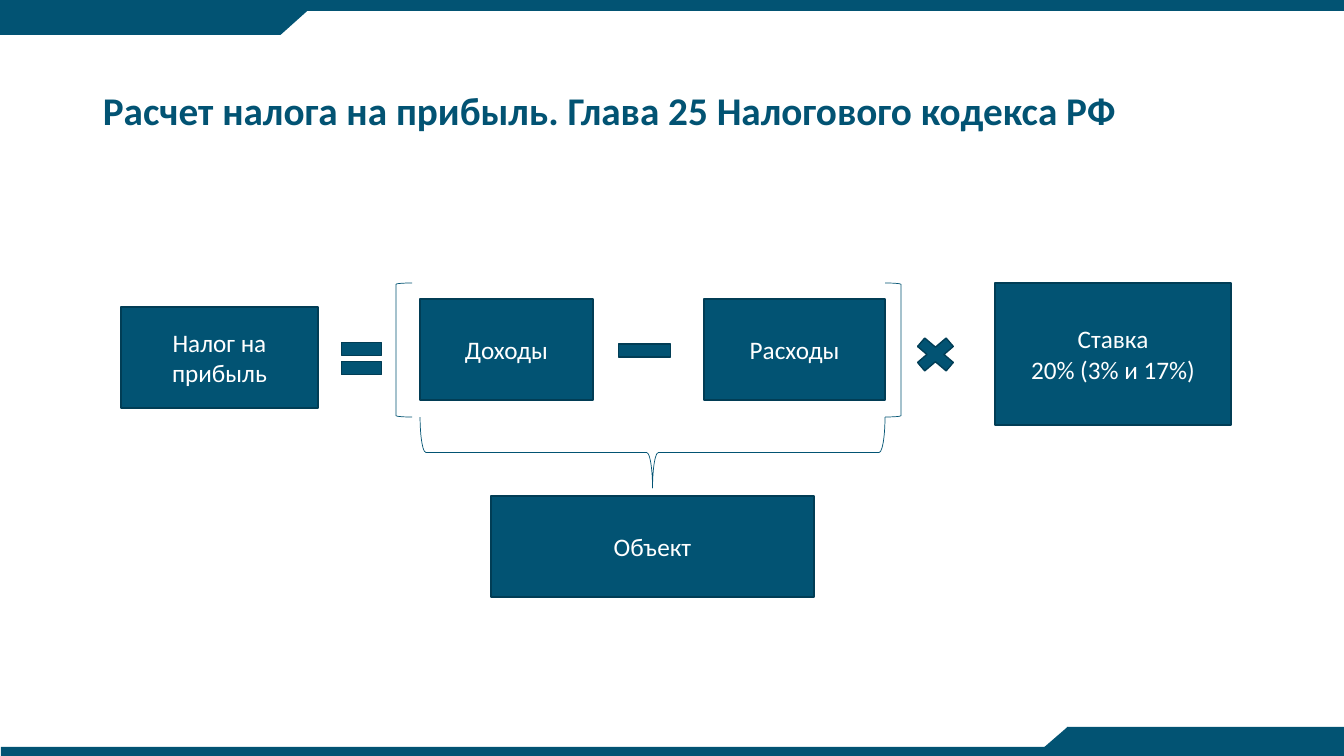
from dataclasses import dataclass

from pptx import Presentation
from pptx.dml.color import RGBColor
from pptx.enum.shapes import MSO_SHAPE as Shape
from pptx.enum.text import MSO_ANCHOR as Anchor, PP_ALIGN as Align
from pptx.util import Emu, Pt

EMU_PER_PX = 914400 / 100.8


def px(length):
    return Emu(round(length * EMU_PER_PX))


@dataclass(frozen=True)
class Theme:
    main: RGBColor = RGBColor.from_string("025373")
    edge: RGBColor = RGBColor.from_string("013D55")
    light: RGBColor = RGBColor.from_string("FFFFFF")
    font: str = "Calibri"
    title_size: int = 28
    body_size: int = 18
    edge_width: float = 1
    thin_width: float = 0.5


@dataclass(frozen=True)
class Box:
    left: int
    top: int
    width: int
    height: int

    def inner(self, left, top, width, height):
        return Box(self.left + left, self.top + top, width, height)

    def emu(self):
        return [px(side) for side in (self.left, self.top, self.width, self.height)]


THEME = Theme()
PAGE = Box(0, 0, 1344, 756)


def add_text(shape, lines, size=THEME.body_size, color=THEME.light, bold=False,
             align=Align.CENTER, spacing=1.0):
    frame = shape.text_frame
    frame.word_wrap = True
    frame.vertical_anchor = Anchor.MIDDLE
    for index, line in enumerate(lines):
        para = frame.paragraphs[0] if index == 0 else frame.add_paragraph()
        para.alignment = align
        para.line_spacing = spacing
        span = para.add_run()
        span.text = line
        span.font.name = THEME.font
        span.font.size = Pt(size)
        span.font.bold = bold
        span.font.color.rgb = color


def add_figure(slide, kind, box, filled=True, line=None, width=THEME.edge_width, rotation=0):
    shape = slide.shapes.add_shape(kind, *box.emu())
    shape.shadow.inherit = False
    shape.rotation = rotation
    if filled:
        shape.fill.solid()
        shape.fill.fore_color.rgb = THEME.main
    else:
        shape.fill.background()
    if line is None:
        shape.line.fill.background()
    else:
        shape.line.color.rgb = line
        shape.line.width = Pt(width)
    return shape


def add_top_band(slide, box):
    add_figure(slide, Shape.RECTANGLE, box.inner(0, 0, box.width, 11))
    add_figure(slide, Shape.RECTANGLE, box.inner(0, 5, 280, 30))
    add_figure(slide, Shape.FLOWCHART_MERGE, box.inner(247, 5, 67, 30))


def add_bottom_band(slide, box):
    add_figure(slide, Shape.RECTANGLE, box.inner(1, 20, box.width - 1, 9))
    add_figure(slide, Shape.RECTANGLE, box.inner(box.width - 277, 0, 277, 29))
    add_figure(slide, Shape.FLOWCHART_MERGE, box.inner(box.width - 310, 0, 67, 29),
               rotation=180)


def add_title(slide, box):
    title = slide.shapes.add_textbox(*box.emu())
    add_text(title, ["Расчет налога на прибыль. Глава 25 Налогового кодекса РФ"],
             size=THEME.title_size, color=THEME.main, bold=True,
             align=Align.LEFT, spacing=0.9)


def add_formula(slide, box):
    base_left, base_width = 299, 465  # from income to expenses
    base_right = base_left + base_width
    bracket_height, brace_depth = 134, 71
    object_width = 323

    # Terms
    terms = [
        (["Налог на прибыль"], (0, 24, 197, 101)),
        (["Расходы"], (base_right - 181, 16, 181, 101)),
        (["Ставка", "20% (3% и 17%)"], (box.width - 236, 0, 236, 142)),
        (["Доходы"], (base_left, 16, 173, 101)),
        (["Объект"], (base_left + (base_width - object_width) // 2, 213, object_width, 101)),
    ]
    for lines, place in terms:
        term = add_figure(slide, Shape.RECTANGLE, box.inner(*place), line=THEME.edge)
        add_text(term, lines)

    # Operators
    operators = [
        (Shape.MATH_EQUAL, (213, 48, 55, 55)),
        (Shape.MATH_MINUS, (488, 40, 71, 55)),
        (Shape.MATH_MULTIPLY, (787, 48, 55, 47)),
    ]
    for kind, place in operators:
        add_figure(slide, kind, box.inner(*place), line=THEME.edge)

    # Brackets around the base, and the brace below, turned on its side
    brace_left = base_left + (base_width - brace_depth) // 2
    brace_top = bracket_height - (base_width - brace_depth) // 2
    enclosures = [
        (Shape.LEFT_BRACKET, (base_left - 24, 0, 16, bracket_height), 0),
        (Shape.RIGHT_BRACKET, (base_right, 0, 16, bracket_height), 0),
        (Shape.RIGHT_BRACE, (brace_left, brace_top, brace_depth, base_width), 90),
    ]
    for kind, place, rotation in enclosures:
        add_figure(slide, kind, box.inner(*place), filled=False, line=THEME.main,
                   width=THEME.thin_width, rotation=rotation)


def main():
    deck = Presentation()
    deck.slide_width, deck.slide_height = px(PAGE.width), px(PAGE.height)
    slide = deck.slides.add_slide(deck.slide_layouts[6])
    add_top_band(slide, PAGE.inner(0, 0, PAGE.width, 35))
    add_bottom_band(slide, PAGE.inner(0, PAGE.height - 29, PAGE.width, 29))
    add_title(slide, PAGE.inner(93, 40, 1159, 146))
    add_formula(slide, PAGE.inner(121, 283, 1110, 314))
    deck.save("out.pptx")


if __name__ == "__main__":
    main()
